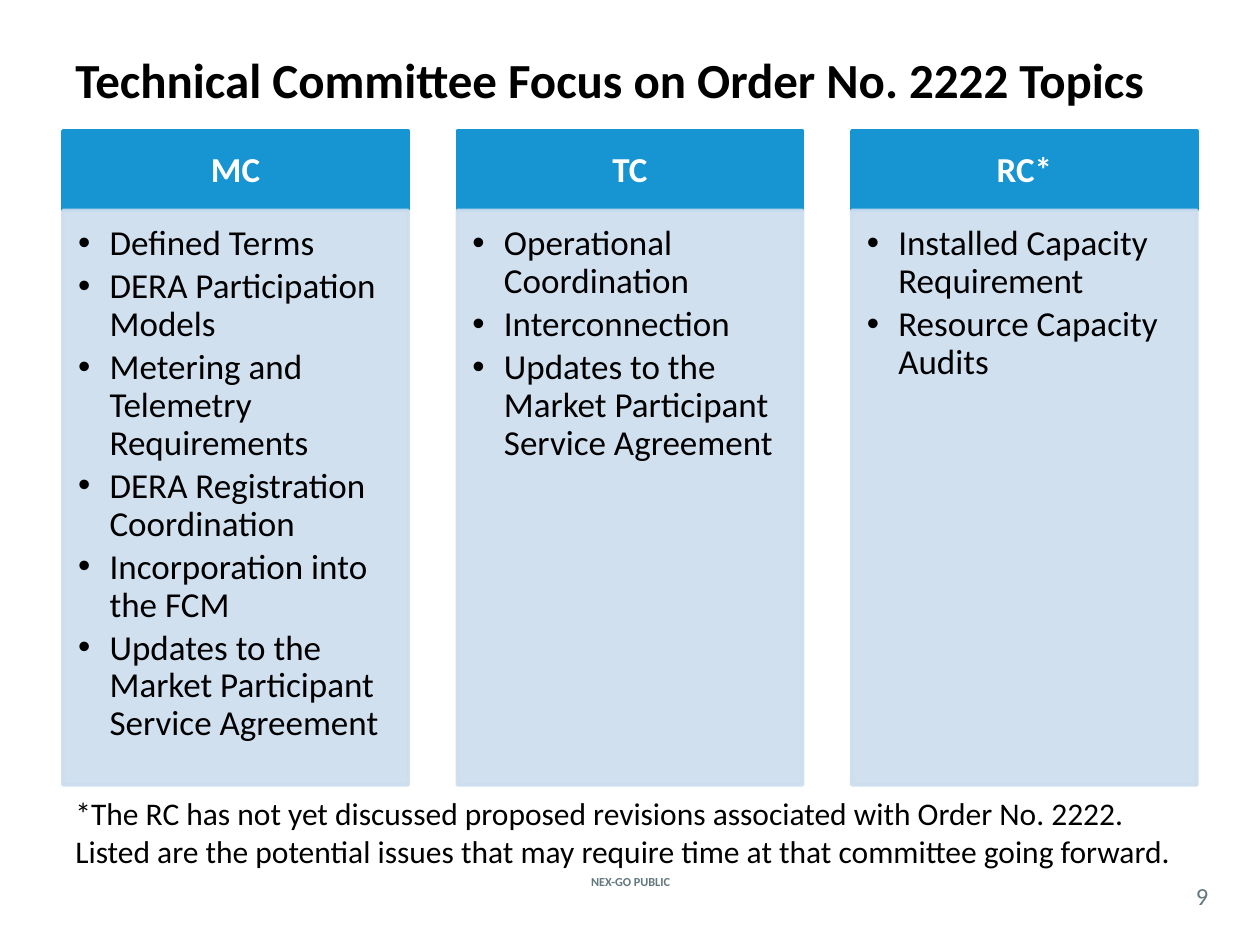
from lxml import etree
from pptx import Presentation
from pptx import util as u
from pptx.dml.color import RGBColor
from pptx.enum import shapes, text
from pptx.oxml.ns import qn

COLORS = {"header": "1795D2", "body": "CCDDEE", "ink": "000000",
          "white": "FFFFFF", "muted": "62777F"}
FONT = "Calibri"
MARGIN, COLUMN_WIDTH, COLUMN_PITCH = 0.5, 2.74, 3.13
HEADER_TOP, HEADER_HEIGHT, BODY_HEIGHT = 1.04, 0.63, 4.56

COMMITTEES = {
    "MC": ["Defined Terms", "DERA Participation Models",
           "Metering and Telemetry Requirements",
           "DERA Registration Coordination", "Incorporation into the FCM",
           "Updates to the Market Participant Service Agreement"],
    "TC": ["Operational Coordination", "Interconnection",
           "Updates to the Market Participant Service Agreement"],
    "RC*": ["Installed Capacity Requirement", "Resource Capacity Audits"],
}


def write(shape, lines, size=20, color="ink", bold=False, centered=False,
          middle=False, insets=(0.1, 0.05, 0.1, 0.05), bullets=False,
          line_spacing=1.0, space_after=0):
    frame = shape.text_frame
    frame.word_wrap = True
    frame.vertical_anchor = (text.MSO_ANCHOR.MIDDLE if middle
                             else text.MSO_ANCHOR.TOP)
    (frame.margin_left, frame.margin_top,
     frame.margin_right, frame.margin_bottom) = map(u.Inches, insets)
    for index, line in enumerate(lines):
        paragraph = frame.add_paragraph() if index else frame.paragraphs[0]
        paragraph.text = line
        paragraph.alignment = (text.PP_ALIGN.CENTER if centered
                               else text.PP_ALIGN.LEFT)
        paragraph.line_spacing = line_spacing
        paragraph.space_after = u.Pt(space_after)
        if bullets:
            add_bullet(paragraph)
        font = paragraph.font
        font.name, font.size, font.bold = FONT, u.Pt(size), bold
        font.color.rgb = RGBColor.from_string(COLORS[color])


def add_bullet(paragraph, indent=0.25):
    properties = paragraph._p.get_or_add_pPr()
    properties.set("marL", str(u.Inches(indent)))
    properties.set("indent", str(-u.Inches(indent)))
    etree.SubElement(properties, qn("a:buFont"), typeface="Arial")
    etree.SubElement(properties, qn("a:buChar"), char="•")


def set_opacity(shape, percent):
    """Apply the opacity to both the fill and the line."""
    for color in shape._element.spPr.iter(qn("a:srgbClr")):
        etree.SubElement(color, qn("a:alpha"), val=str(percent * 1000))


class CommitteeSlide:
    def __init__(self, presentation):
        self.slide = presentation.slides.add_slide(
            presentation.slide_layouts[6])

    def label(self, box, line, **style):
        shape = self.slide.shapes.add_textbox(*map(u.Inches, box))
        write(shape, [line], **style)

    def panel(self, box, fill, lines, opacity=100, **style):
        shape = self.slide.shapes.add_shape(
            shapes.MSO_SHAPE.RECTANGLE, *map(u.Inches, box))
        shape.shadow.inherit = False
        shape.fill.solid()
        shape.fill.fore_color.rgb = RGBColor.from_string(COLORS[fill])
        shape.line.color.rgb = RGBColor.from_string(COLORS[fill])
        shape.line.width = u.Pt(2)
        if opacity < 100:
            set_opacity(shape, opacity)
        write(shape, lines, line_spacing=0.9, **style)

    def committee(self, column, name, topics):
        left = MARGIN + column * COLUMN_PITCH
        self.panel((left, HEADER_TOP, COLUMN_WIDTH, HEADER_HEIGHT), "header",
                   [name], color="white", bold=True, centered=True,
                   middle=True, insets=(0.16, 0.09, 0.16, 0.09),
                   space_after=7)
        self.panel((left, HEADER_TOP + HEADER_HEIGHT, COLUMN_WIDTH,
                    BODY_HEIGHT), "body", topics, opacity=90, bullets=True,
                   insets=(0.12, 0.12, 0.16, 0.17), space_after=3)


def main():
    presentation = Presentation()
    presentation.slide_width = u.Inches(10)
    presentation.slide_height = u.Inches(7.5)
    page = CommitteeSlide(presentation)

    page.label((4.27, 6.75, 1.47, 0.5), "NEX-GO PUBLIC", size=7,
               color="muted", bold=True, centered=True, middle=True)
    page.label((MARGIN, 0, 9, 1.25),
               "Technical Committee Focus on Order No. 2222 Topics",
               size=28, bold=True, middle=True)
    for column, (name, topics) in enumerate(COMMITTEES.items()):
        page.committee(column, name, topics)
    page.label((9.33, 6.96, 0.42, 0.29), "9", size=14, color="muted",
               centered=True, middle=True, insets=(0, 0, 0, 0))
    page.label((MARGIN, 6.25, 9, 0.71),
               "*The RC has not yet discussed proposed revisions associated "
               "with Order No. 2222. Listed are the potential issues that may "
               "require time at that committee going forward.", size=18)
    presentation.save("out.pptx")


if __name__ == "__main__":
    main()
